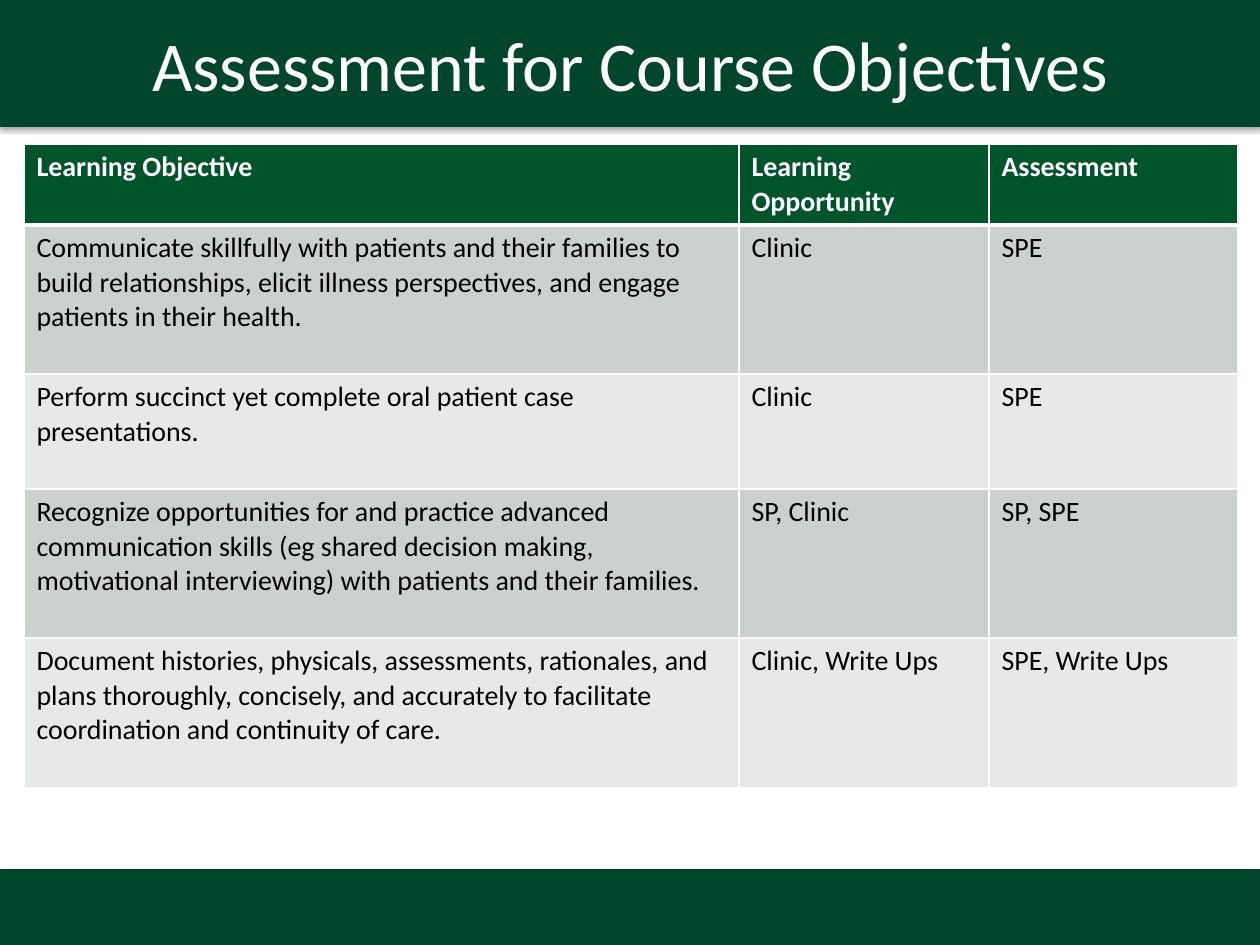
from lxml import etree
from pptx import Presentation
from pptx.dml.color import RGBColor
from pptx.enum.shapes import MSO_SHAPE
from pptx.enum.text import MSO_ANCHOR, PP_ALIGN
from pptx.oxml import parse_xml
from pptx.oxml.ns import nsdecls, qn
from pptx.util import Pt

RECT = MSO_SHAPE.RECTANGLE
MIDDLE = MSO_ANCHOR.MIDDLE
CENTER = PP_ALIGN.CENTER
SCALE = 914400 / 126
WIDTH, HEIGHT = 1260, 945
GREEN, EDGE, HEAD = "00462D", "00442D", "00542C"
WHITE, BLACK = "FFFFFF", "000000"
BANDS = ["CCD1CD", "E7E9E8"]
COLS = [715, 250, 249]
ROWS = [
    (81, ["Learning Objective", "Learning Opportunity", "Assessment"]),
    (149, ["Communicate skillfully with patients and their families to build "
           "relationships, elicit illness perspectives, and engage patients "
           "in their health.", "Clinic", "SPE"]),
    (115, ["Perform succinct yet complete oral patient case presentations.",
           "Clinic", "SPE"]),
    (149, ["Recognize opportunities for and practice advanced communication "
           "skills (eg shared decision making, motivational interviewing) "
           "with patients and their families.", "SP, Clinic", "SP, SPE"]),
    (150, ["Document histories, physicals, assessments, rationales, and plans "
           "thoroughly, concisely, and accurately to facilitate coordination "
           "and continuity of care.", "Clinic, Write Ups", "SPE, Write Ups"]),
]


def px(n):
    return round(n * SCALE)


def color(code):
    return RGBColor.from_string(code)


def style(font, code, **values):
    font.color.rgb = color(code)
    for name, value in {"name": "Calibri", **values}.items():
        setattr(font, name, value)


def shade(shape):
    shape._element.spPr.append(parse_xml(
        f'<a:effectLst {nsdecls("a")}>'
        f'<a:outerShdw blurRad="{Pt(3.1)}" dist="{Pt(1.8)}" dir="5400000" '
        'rotWithShape="0"><a:srgbClr val="000000"><a:alpha val="35000"/>'
        '</a:srgbClr></a:outerShdw></a:effectLst>'))


def add_bar(slide, top, high):
    bar = slide.shapes.add_shape(RECT, 0, px(top), px(WIDTH), px(high))
    bar.fill.solid()
    bar.fill.fore_color.rgb = color(GREEN)
    bar.line.color.rgb = color(EDGE)
    bar.line.width = Pt(0.75)
    shade(bar)


def add_title(slide, text):
    box = slide.shapes.add_textbox(0, 0, px(WIDTH), px(127))
    box.fill.solid()
    box.fill.fore_color.rgb = color(GREEN)
    frame = box.text_frame
    frame.word_wrap = True
    frame.vertical_anchor = MIDDLE
    frame.text = text
    para = frame.paragraphs[0]
    para.alignment = CENTER
    style(para.font, WHITE, size=Pt(40))


def add_edge(cell, side, points):
    line = etree.SubElement(cell._tc.get_or_add_tcPr(), qn(f"a:ln{side}"),
                            w=str(Pt(points)))
    fill = etree.SubElement(line, qn("a:solidFill"))
    etree.SubElement(fill, qn("a:srgbClr"), val=WHITE)


def fill_cell(cell, text, row):
    head = row == 0
    thick = {"T": 3} if row == 1 else {"B": 3} if head else {}
    for side in "LRTB":
        add_edge(cell, side, thick.get(side, 1))
    cell.fill.solid()
    cell.fill.fore_color.rgb = color(HEAD if head else BANDS[(row - 1) % 2])
    cell.text = text
    style(cell.text_frame.paragraphs[0].font, WHITE if head else BLACK,
          size=Pt(16), bold=head)


def add_grid(slide, left, top):
    wide, high = sum(COLS), sum(size for size, _ in ROWS)
    grid = slide.shapes.add_table(len(ROWS), len(COLS), px(left), px(top),
                                  px(wide), px(high)).table
    for col, size in zip(grid.columns, COLS):
        col.width = px(size)
    for row, (size, texts) in enumerate(ROWS):
        grid.rows[row].height = px(size)
        for col, text in enumerate(texts):
            fill_cell(grid.cell(row, col), text, row)


def main():
    deck = Presentation()
    deck.slide_width, deck.slide_height = px(WIDTH), px(HEIGHT)
    slide = deck.slides.add_slide(deck.slide_layouts[6])
    add_bar(slide, 0, 125)
    add_bar(slide, 870, 75)
    add_title(slide, "Assessment for Course Objectives")
    add_grid(slide, 24, 144)
    deck.save("out.pptx")


if __name__ == "__main__":
    main()
